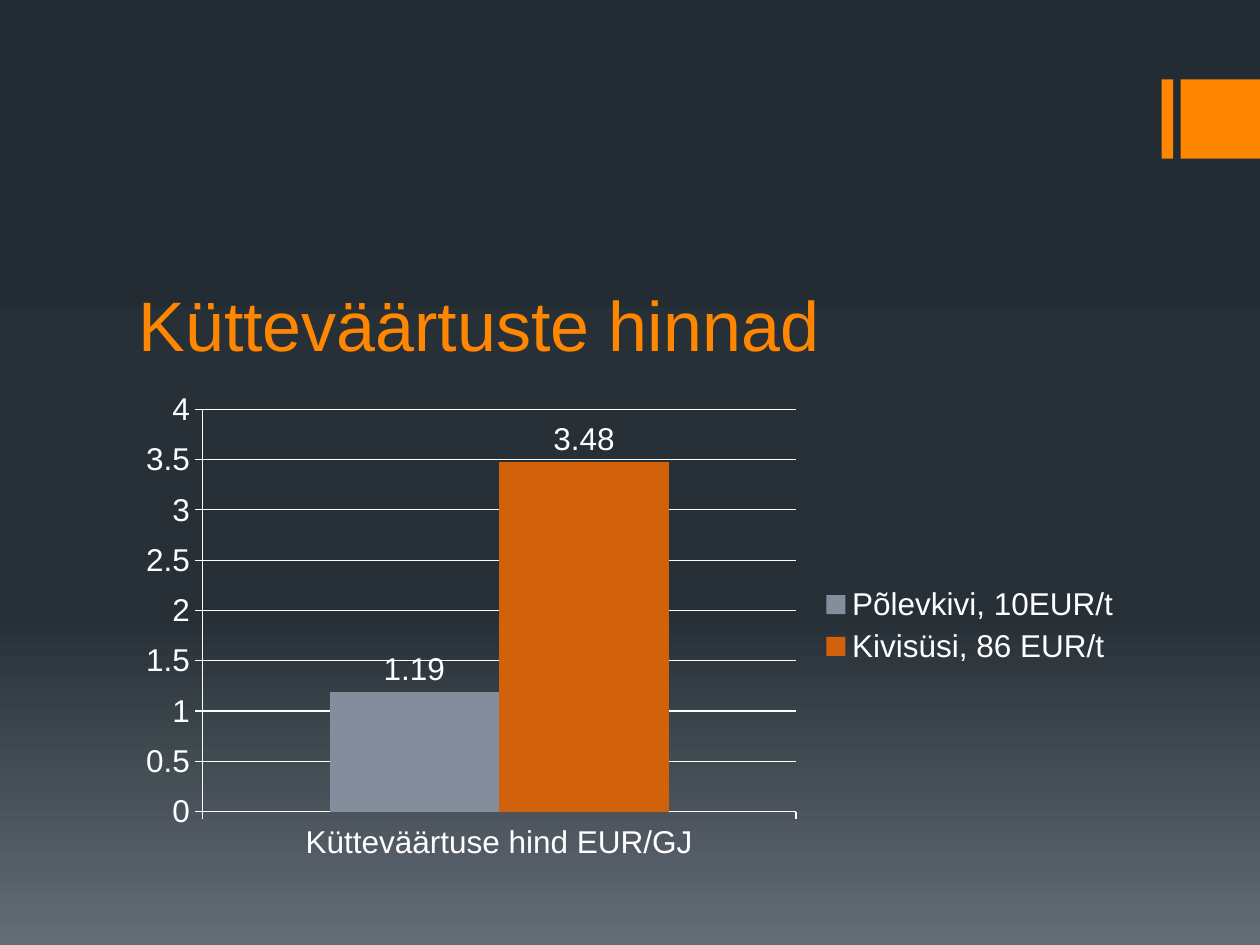
import copy

import pptx
import pptx.chart.data
import pptx.dml.color
import pptx.enum.chart
import pptx.enum.shapes
import pptx.enum.text
import pptx.util
from pptx.util import Inches

FONT = "Arial"
ORANGE = "FF8600"
WHITE = "FFFFFF"
BACKGROUND_STOPS = [(0, "242C33"), (0.65, "273037"), (1, "636D76")]
CATEGORY = "Kütteväärtuse hind EUR/GJ"
FUELS = [
    ("Põlevkivi, 10EUR/t", 1.19, "838D9B"),
    ("Kivisüsi, 86 EUR/t", 3.48, "D2610C"),
]


def rgb(value):
    return pptx.dml.color.RGBColor.from_string(value)


def set_font(font, size, color):
    font.name = FONT
    font.size = pptx.util.Pt(size)
    font.color.rgb = rgb(color)


def paint_background(s):
    fill = s.background.fill
    fill.gradient()
    fill.gradient_angle = 270
    stop_list = s.element.xpath(".//a:gsLst")[0]
    stop_list.append(copy.deepcopy(stop_list[-1]))
    for stop, (position, color) in zip(fill.gradient_stops, BACKGROUND_STOPS):
        stop.position = position
        stop.color.rgb = rgb(color)


def add_corner_mark(s, left, top, width, height):
    """Place a thin bar and a square, flush with the right of the box."""
    square_left = left + width - height
    for x, w in ((left, Inches(0.09)), (square_left, height)):
        sp = s.shapes.add_shape(pptx.enum.shapes.MSO_SHAPE.RECTANGLE, x, top, w, height)
        sp.shadow.inherit = False
        sp.fill.solid()
        sp.fill.fore_color.rgb = rgb(ORANGE)
        sp.line.fill.background()


def set_title(s, text, left, top, width, height):
    sp = s.shapes.title
    sp.left, sp.top, sp.width, sp.height = left, top, width, height
    tf = sp.text_frame
    tf.text = text
    tf.word_wrap = True
    tf.vertical_anchor = pptx.enum.text.MSO_ANCHOR.BOTTOM
    p = tf.paragraphs[0]
    p.alignment = pptx.enum.text.PP_ALIGN.LEFT
    set_font(p.font, 40, ORANGE)


def style_line(line):
    line.color.rgb = rgb(WHITE)
    line.width = pptx.util.Pt(0.75)


def add_price_chart(s, left, top, width, height):
    data = pptx.chart.data.CategoryChartData()
    data.categories = [CATEGORY]
    for name, price, _ in FUELS:
        data.add_series(name, [price])
    chart = s.shapes.add_chart(
        pptx.enum.chart.XL_CHART_TYPE.COLUMN_CLUSTERED, left, top, width, height, data
    ).chart
    chart.has_title = False
    set_font(chart.font, 18, WHITE)

    chart.has_legend = True
    chart.legend.position = pptx.enum.chart.XL_LEGEND_POSITION.RIGHT
    chart.legend.include_in_layout = False

    for axis in (chart.category_axis, chart.value_axis):
        axis.major_tick_mark = pptx.enum.chart.XL_TICK_MARK.OUTSIDE
        axis.minor_tick_mark = pptx.enum.chart.XL_TICK_MARK.NONE
        style_line(axis.format.line)
    chart.value_axis.has_major_gridlines = True
    style_line(chart.value_axis.major_gridlines.format.line)

    plot = chart.plots[0]
    plot.gap_width = 150
    plot.overlap = 0
    plot.vary_by_categories = False
    for series, (_, _, color) in zip(plot.series, FUELS):
        series.format.fill.solid()
        series.format.fill.fore_color.rgb = rgb(color)
        labels = series.data_labels
        labels.show_value = True
        labels.position = pptx.enum.chart.XL_LABEL_POSITION.OUTSIDE_END
        set_font(labels.font, 18, WHITE)


def main():
    prs = pptx.Presentation()
    prs.slide_width, prs.slide_height = Inches(10), Inches(7.5)
    s = prs.slides.add_slide(prs.slide_layouts[5])
    paint_background(s)
    add_corner_mark(s, Inches(9.22), Inches(0.63), Inches(0.78), Inches(0.63))
    set_title(s, "Kütteväärtuste hinnad", Inches(1), Inches(1.69), Inches(8), Inches(1.26))
    add_price_chart(s, Inches(1), Inches(3.03), Inches(8), Inches(3.87))
    prs.save("out.pptx")


if __name__ == "__main__":
    main()
